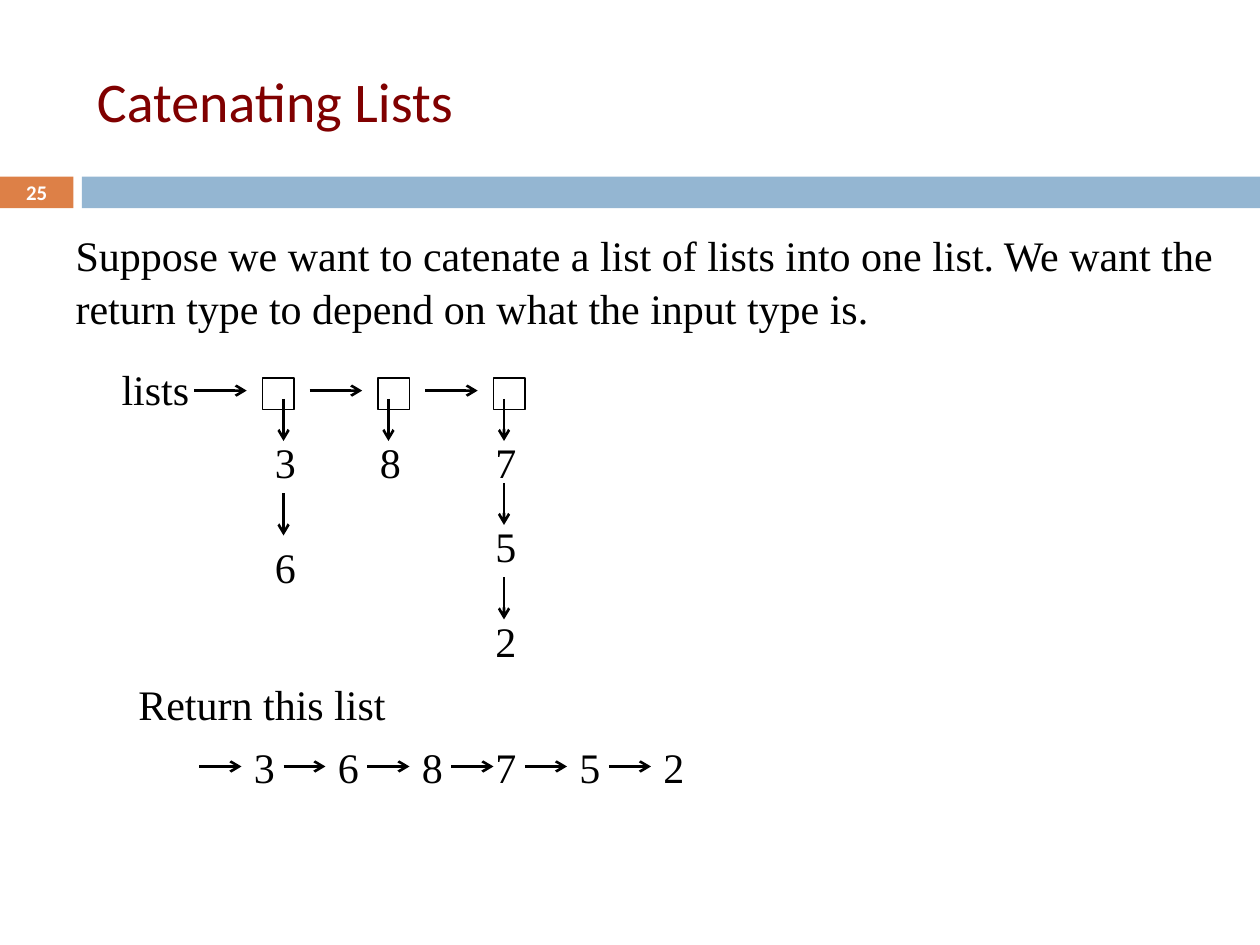
from dataclasses import dataclass

import lxml.etree
import pptx
import pptx.dml.color
import pptx.enum.shapes
import pptx.enum.text
import pptx.oxml.ns
import pptx.util

Cm = pptx.util.Cm
Pt = pptx.util.Pt
RGBColor = pptx.dml.color.RGBColor


@dataclass(frozen=True)
class Theme:
    ink: RGBColor = RGBColor(0x00, 0x00, 0x00)
    title: RGBColor = RGBColor(0x80, 0x00, 0x00)
    accent: RGBColor = RGBColor(0xDD, 0x80, 0x47)
    band: RGBColor = RGBColor(0x94, 0xB6, 0xD2)
    light: RGBColor = RGBColor(0xFF, 0xFF, 0xFF)
    heading_font: str = "Calibri"
    body_font: str = "Times New Roman"
    title_size: float = 32
    body_size: float = 24
    number_size: float = 11.9
    arrow_width: float = 1.5
    box_width: float = 0.79


@dataclass(frozen=True)
class Node:
    """A value with the top of its label and the start of the arrow to it."""
    value: str
    top: float
    arrow_top: float


@dataclass(frozen=True)
class InnerList:
    """A column of nodes hanging below its arrow line."""
    arrow_left: float
    nodes: tuple[Node, ...]


@dataclass(frozen=True)
class ResultItem:
    value: str
    arrow_left: float
    label_left: float


THEME = Theme()

# Diagram positions are counted in twelfths of an inch.
BOX_SIZE = 3
BOX_TOP = 36
FIRST_BOX_LEFT = 25
BOX_STEP = 11
CHAIN_ARROW_LEFT = 18.5
CHAIN_ARROW_LENGTH = 5
CHAIN_ARROW_TOP = 37.2
ARROW_LENGTH = 4
RESULT_ARROW_TOP = 73
RESULT_LABEL_TOP = 70

INNER_LISTS = (
    InnerList(27, (Node("3", 41, 38), Node("6", 51, 47))),
    InnerList(37, (Node("8", 41, 38),)),
    InnerList(48, (Node("7", 41, 38), Node("5", 49, 46), Node("2", 58, 55))),
)
RESULT_ITEMS = (
    ResultItem("3", 19, 23),
    ResultItem("6", 27, 31),
    ResultItem("8", 35, 39),
    ResultItem("7", 43, 46),
    ResultItem("5", 50, 54),
    ResultItem("2", 58, 62),
)


def grid(count: float) -> pptx.util.Length:
    return Cm(2.54 * count / 12)


def place(shape, left, top, width, height) -> None:
    shape.left, shape.top, shape.width, shape.height = left, top, width, height


def write(shape, text: str, font_name: str, size: float, color: RGBColor, bold: bool = False):
    """Set a one-paragraph text, format it and return the paragraph."""
    shape.text_frame.text = text
    paragraph = shape.text_frame.paragraphs[0]
    font = paragraph.runs[0].font
    font.name, font.size, font.bold = font_name, Pt(size), bold
    font.color.rgb = color
    return paragraph


def add_rectangle(slide, left, top, width, height):
    shape = slide.shapes.add_shape(
        pptx.enum.shapes.MSO_SHAPE.RECTANGLE, left, top, width, height)
    shape.shadow.inherit = False
    return shape


def add_bar(slide, left: float, width: float, color: RGBColor) -> None:
    bar = add_rectangle(slide, Cm(left), Cm(3.56), Cm(width), Cm(0.64))
    bar.fill.solid()
    bar.fill.fore_color.rgb = color
    bar.line.fill.background()


def add_box(slide, left: float) -> None:
    box = add_rectangle(slide, grid(left), grid(BOX_TOP), grid(BOX_SIZE), grid(BOX_SIZE))
    box.fill.background()
    box.line.color.rgb = THEME.ink
    box.line.width = Pt(THEME.box_width)


def add_arrow(slide, left: float, top: float, across: float = 0, down: float = 0) -> None:
    arrow = slide.shapes.add_connector(
        pptx.enum.shapes.MSO_CONNECTOR.STRAIGHT,
        grid(left), grid(top), grid(left + across), grid(top + down))
    arrow.line.color.rgb = THEME.ink
    arrow.line.width = Pt(THEME.arrow_width)
    qn = pptx.oxml.ns.qn
    properties = arrow.element.spPr
    lxml.etree.SubElement(properties.find(qn("a:ln")), qn("a:tailEnd"), type="arrow")
    lxml.etree.SubElement(properties, qn("a:effectLst"))


def add_label(slide, text: str, left: float, top: float,
              width: float = BOX_SIZE, wrap: bool = True) -> None:
    label = slide.shapes.add_textbox(grid(left), grid(top), grid(width), grid(6))
    label.text_frame.word_wrap = wrap
    write(label, text, THEME.body_font, THEME.body_size, THEME.ink)


def add_heading(slide) -> None:
    title = slide.shapes.title
    place(title, Cm(1.7), Cm(0.64), Cm(22.66), Cm(2.74))
    title.text_frame.vertical_anchor = pptx.enum.text.MSO_ANCHOR.MIDDLE
    title.text_frame.auto_size = pptx.enum.text.MSO_AUTO_SIZE.NONE
    paragraph = write(title, "Catenating Lists", THEME.heading_font,
                      THEME.title_size, THEME.title)
    paragraph.alignment = pptx.enum.text.PP_ALIGN.LEFT

    add_bar(slide, 0, 1.48, THEME.accent)
    add_bar(slide, 1.65, 23.75, THEME.band)
    number = slide.shapes.add_textbox(0, Cm(3.53), Cm(1.48), Cm(0.69))
    number.text_frame.word_wrap = True
    number.text_frame.vertical_anchor = pptx.enum.text.MSO_ANCHOR.MIDDLE
    paragraph = write(number, "25", THEME.heading_font, THEME.number_size,
                      THEME.light, bold=True)
    paragraph.alignment = pptx.enum.text.PP_ALIGN.CENTER


def add_introduction(slide) -> None:
    body = slide.placeholders[1]
    place(body, Cm(1.27), Cm(4.45), Cm(23.66), Cm(2.74))
    body.text_frame.auto_size = pptx.enum.text.MSO_AUTO_SIZE.NONE
    paragraph = write(
        body,
        "Suppose we want to catenate a list of lists into one list. "
        "We want the return type to depend on what the input type is.",
        THEME.body_font, THEME.body_size, THEME.ink)
    paragraph.space_before = Pt(7)
    paragraph.line_spacing = 1.05
    properties = paragraph._p.get_or_add_pPr()
    properties.set("marL", "0")
    properties.set("indent", "0")
    lxml.etree.SubElement(properties, pptx.oxml.ns.qn("a:buNone"))


def add_list_of_lists(slide) -> None:
    add_label(slide, "lists", 10.4, 34, width=8.9, wrap=False)
    for index, inner_list in enumerate(INNER_LISTS):
        offset = index * BOX_STEP
        add_arrow(slide, CHAIN_ARROW_LEFT + offset, CHAIN_ARROW_TOP,
                  across=CHAIN_ARROW_LENGTH)
        add_box(slide, FIRST_BOX_LEFT + offset)
        for node in inner_list.nodes:
            add_arrow(slide, inner_list.arrow_left, node.arrow_top, down=ARROW_LENGTH)
            add_label(slide, node.value, inner_list.arrow_left - 2, node.top)


def add_result(slide) -> None:
    add_label(slide, "Return this list", 12, 64, width=26.3, wrap=False)
    for item in RESULT_ITEMS:
        add_arrow(slide, item.arrow_left, RESULT_ARROW_TOP, across=ARROW_LENGTH)
        add_label(slide, item.value, item.label_left, RESULT_LABEL_TOP)


def main() -> None:
    presentation = pptx.Presentation()
    presentation.slide_width, presentation.slide_height = Cm(25.4), Cm(19.05)
    slide = presentation.slides.add_slide(presentation.slide_layouts[1])
    add_heading(slide)
    add_introduction(slide)
    add_list_of_lists(slide)
    add_result(slide)
    presentation.save("out.pptx")


if __name__ == "__main__":
    main()
